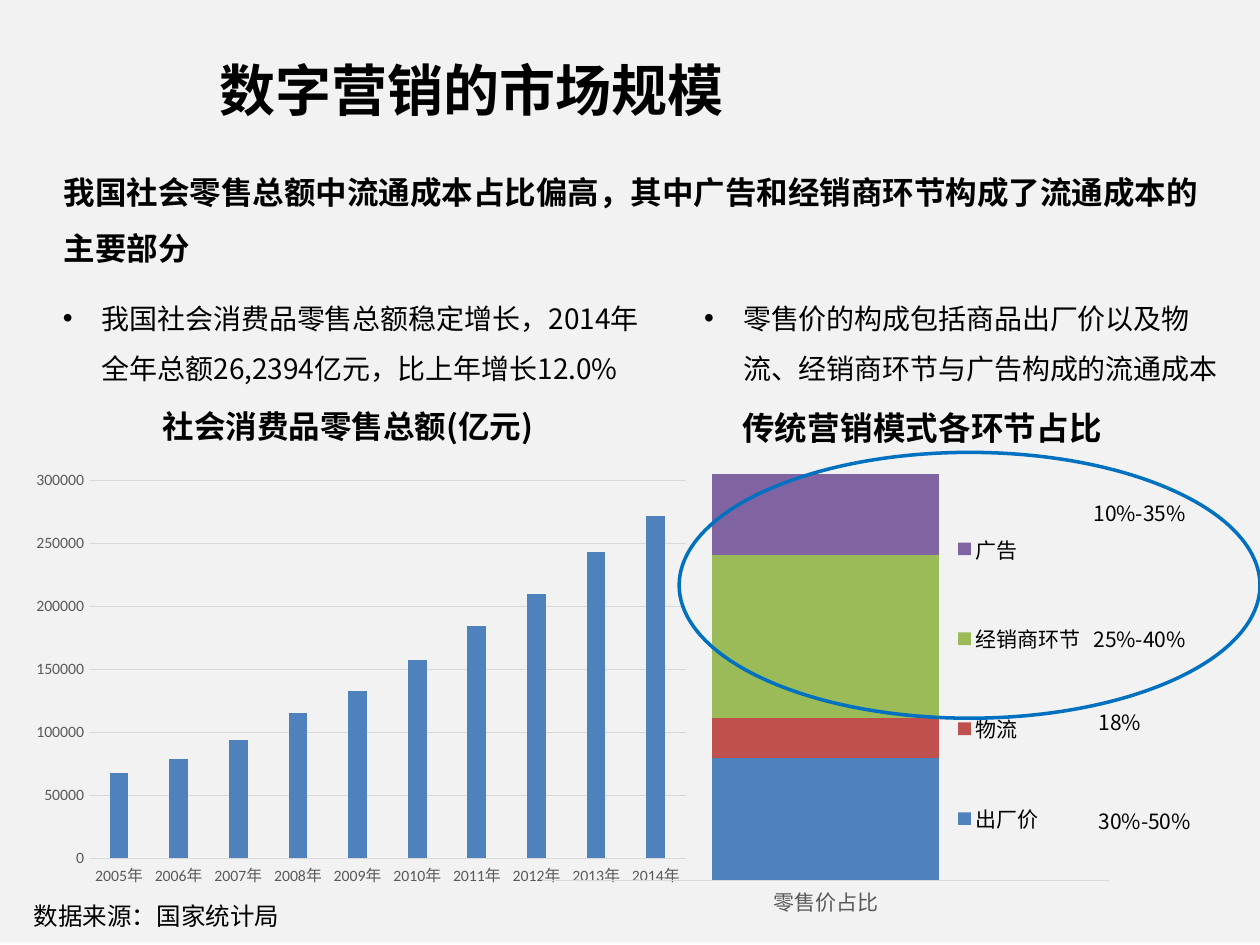
from lxml.etree import SubElement
from pptx import Presentation
from pptx.chart.data import CategoryChartData
from pptx.dml.color import RGBColor
from pptx.enum.chart import XL_CHART_TYPE, XL_LEGEND_POSITION, XL_TICK_LABEL_POSITION, XL_TICK_MARK
from pptx.enum.shapes import MSO_SHAPE
from pptx.enum.text import MSO_ANCHOR, MSO_AUTO_SIZE, PP_ALIGN
from pptx.oxml import parse_xml
from pptx.oxml.ns import nsdecls, qn
from pptx.util import Inches, Pt

BLACK = RGBColor(0x00, 0x00, 0x00)
PAPER = RGBColor(0xF2, 0xF2, 0xF2)
GREY = RGBColor(0x59, 0x59, 0x59)
RULE = RGBColor(0xD9, 0xD9, 0xD9)
RING = RGBColor(0x00, 0x70, 0xC0)
BLUE = RGBColor(0x4F, 0x81, 0xBD)
RED = RGBColor(0xC0, 0x50, 0x4D)
GREEN = RGBColor(0x9B, 0xBB, 0x59)
PURPLE = RGBColor(0x80, 0x64, 0xA2)
HAN, LATIN = "Noto Sans CJK SC", "Calibri"
COLUMNS, ROWS = 100, 75
CELL = Inches(0.1)

TOTALS = [68000, 79000, 94000, 115000, 133000, 157000, 184000, 210000, 243000, 272000]
PARTS = [("出厂价", 75, BLUE), ("物流", 25, RED), ("经销商环节", 100, GREEN), ("广告", 50, PURPLE)]
SHARES = [("30%-50%", 86.2, 63.7, 10.6), ("25%-40%", 85.8, 49.2, 10.6),
          ("10%-35%", 85.8, 39.2, 10.6), ("18%", 86.2, 55.8, 6)]
POINTS = [("我国社会消费品零售总额稳定增长，2014年全年总额26,2394亿元，比上年增长12.0%", 4, 49.2),
          ("零售价的构成包括商品出厂价以及物流、经销商环节与广告构成的流通成本", 54.9, 44.8)]


def cells(*counts):
    """Turn grid cells into lengths."""
    return [int(n * CELL) for n in counts]


def set_all(target, **values):
    """Set attributes from a dict of format values."""
    for name, value in values.items():
        setattr(target, name, value)


def set_font(font, size, color=BLACK, name=LATIN, bold=False):
    """Format a font."""
    set_all(font, size=Pt(size), name=name, bold=bold)
    font.color.rgb = color


def add_run(p, text, size, bold):
    """Add a run in the Chinese font."""
    r = p.add_run()
    r.text = text
    set_font(r.font, size, name=HAN, bold=bold)
    SubElement(r._r.get_or_add_rPr(), qn("a:ea"), typeface=HAN)


def fill_text(tf, text, size, bold=False, wrap=False, spacing=None, bullet=False):
    """Write one paragraph into a text frame."""
    set_all(tf, word_wrap=wrap, auto_size=MSO_AUTO_SIZE.NONE, vertical_anchor=MSO_ANCHOR.TOP)
    p = tf.paragraphs[0]
    set_all(p, alignment=PP_ALIGN.LEFT, line_spacing=spacing)
    if bullet:
        pPr = p._p.get_or_add_pPr()
        for name, value in {"marL": Inches(0.31), "indent": -Inches(0.31), "hangingPunct": 0}.items():
            pPr.set(name, str(value))
        SubElement(pPr, qn("a:buFont"), typeface="Arial")
        SubElement(pPr, qn("a:buChar"), char="•")
    add_run(p, text, size, bold)


def add_text(s, at, text, size, **style):
    """Add a text box on the grid."""
    fill_text(s.shapes.add_textbox(*cells(*at)).text_frame, text, size, **style)


def add_shape(s, kind, at, fill=None, line=None):
    """Add a preset shape with an optional fill and outline."""
    sp = s.shapes.add_shape(kind, *cells(*at))
    sp.shadow.inherit = False
    for fmt, color in ((sp.fill, fill), (sp.line.fill, line)):
        if color is None:
            fmt.background()
        else:
            fmt.solid()
            fmt.fore_color.rgb = color
    if line is not None:
        sp.line.width = Pt(2)
    return sp


def layout_xml(x, y, w=None, h=None, inner=False):
    """Build a manual layout from shares of the chart area."""
    items = [("layoutTarget", "inner")] if inner else []
    items += [("xMode", "edge"), ("yMode", "edge"), ("x", x), ("y", y)]
    items += [("w", w), ("h", h)] if w else []
    body = "".join(f'<c:{tag} val="{val}"/>' for tag, val in items)
    return parse_xml(f'<c:layout {nsdecls("c")}><c:manualLayout>{body}</c:manualLayout></c:layout>')


def place(element, after, layout):
    """Put a layout in a chart part, after a given child or first."""
    for old in element.findall(qn("c:layout")):
        element.remove(old)
    anchor = element.find(qn(after)) if after else None
    element.insert(0 if anchor is None else element.index(anchor) + 1, layout)


def add_chart(s, kind, at, cats, series, title, title_size, title_at, plot_at, gap, overlap, top, label_size):
    """Add a column chart with its title, plot area and category axis."""
    data = CategoryChartData()
    data.categories = cats
    for name, values, _ in series:
        data.add_series(name, values)
    chart = s.shapes.add_chart(kind, *cells(*at), data).chart
    set_font(chart.font, 10)
    set_all(chart, has_legend=False, has_title=True)
    add_run(chart.chart_title.text_frame.paragraphs[0], title, title_size, True)
    chart.chart_title.include_in_layout = False
    place(chart.chart_title._element, "c:tx", layout_xml(*title_at))
    place(chart._chartSpace.chart.plotArea, None, layout_xml(*plot_at, inner=True))
    plot = chart.plots[0]
    set_all(plot, gap_width=gap, overlap=overlap, vary_by_categories=False)
    for ser, (_, _, color) in zip(plot.series, series):
        ser.format.fill.solid()
        ser.format.fill.fore_color.rgb = color
    for axis in (chart.category_axis, chart.value_axis):
        set_all(axis, major_tick_mark=XL_TICK_MARK.NONE, minor_tick_mark=XL_TICK_MARK.NONE)
        set_font(axis.tick_labels.font, label_size, GREY)
    set_all(chart.value_axis, minimum_scale=0, maximum_scale=top, major_unit=top / 6)
    chart.value_axis.format.line.fill.background()
    set_rule(chart.category_axis.format.line)
    return chart


def set_rule(line):
    """Format a thin grey chart line."""
    line.width = Pt(0.75)
    line.color.rgb = RULE


def add_totals_chart(s):
    """Add the chart of yearly retail totals."""
    name = "社会消费品零售总额(亿元)"
    chart = add_chart(s, XL_CHART_TYPE.COLUMN_CLUSTERED, (1.7, 29.9, 53.8, 41.1),
                      [f"{year}年" for year in range(2005, 2015)], [(name, TOTALS, BLUE)],
                      name, 18, (0.2, 0.03), (0.1, 0.2, 0.88, 0.73), 219, -27, 300000, 9)
    set_rule(chart.value_axis.major_gridlines.format.line)


def add_parts_chart(s):
    """Add the stacked chart of price parts with its legend."""
    chart = add_chart(s, XL_CHART_TYPE.COLUMN_STACKED, (43, 24.1, 57, 50.3), ["零售价占比"],
                      [(name, [value], color) for name, value, color in PARTS],
                      "传统营销模式各环节占比", 18.6, (0.27, 0.14), (0, 0.14, 0.79, 0.77), 150, 100, 300, 12)
    set_all(chart.value_axis, visible=False, has_major_gridlines=False,
            tick_label_position=XL_TICK_LABEL_POSITION.NONE)
    chart.has_legend = True
    set_all(chart.legend, position=XL_LEGEND_POSITION.RIGHT, include_in_layout=False)
    set_font(chart.legend.font, 12)
    place(chart.legend._element, "c:legendPos", layout_xml(0.55, 0.27, 0.23, 0.66))


def main():
    """Build the slide and save it."""
    prs = Presentation()
    set_all(prs, slide_width=COLUMNS * CELL, slide_height=ROWS * CELL)
    s = prs.slides.add_slide(prs.slide_layouts[5])
    back = add_shape(s, MSO_SHAPE.RECTANGLE, (0, -0.2, COLUMNS, ROWS), fill=PAPER)
    s.shapes._spTree.insert(2, back._element)
    title = s.shapes.title
    set_all(title, **dict(zip(("left", "top", "width", "height"), cells(16.4, 3.9, 42.4, 6.4))))
    fill_text(title.text_frame, "数字营销的市场规模", 32, bold=True)
    add_totals_chart(s)
    add_text(s, (1.7, 71, 21.7, 3.4), "数据来源：国家统计局", 14)
    add_parts_chart(s)
    for text, x, y, w in SHARES:
        add_text(s, (x, y, w, 2.8), text, 12)
    add_text(s, (4.1, 11.7, 93, 10.1), "我国社会零售总额中流通成本占比偏高，其中广告和经销商环节构成了流通成本的主要部分",
             18, bold=True, wrap=True, spacing=1.5)
    for text, x, w in POINTS:
        add_text(s, (x, 22.1, w, 9.1), text, 16, wrap=True, spacing=1.5, bullet=True)
    add_shape(s, MSO_SHAPE.OVAL, (53.9, 35.9, 46.1, 21.1), line=RING)
    prs.save("out.pptx")


if __name__ == "__main__":
    main()
